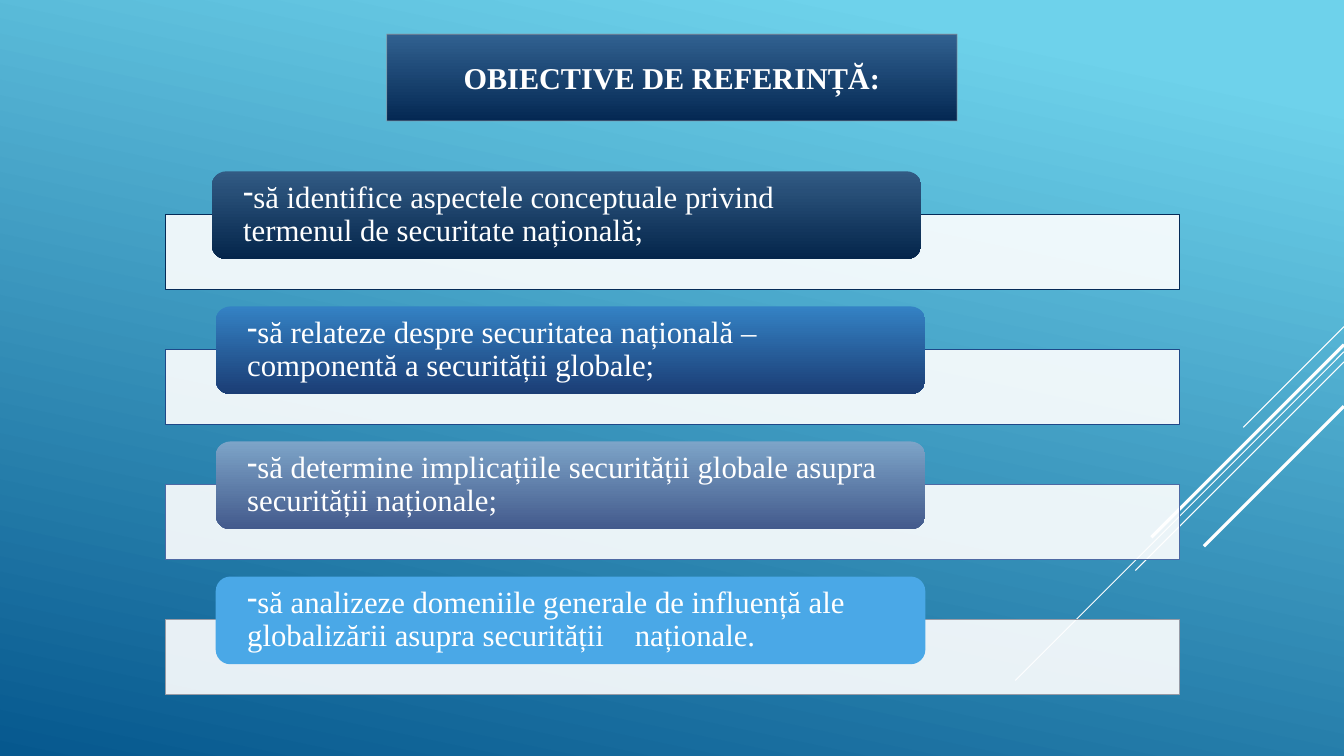
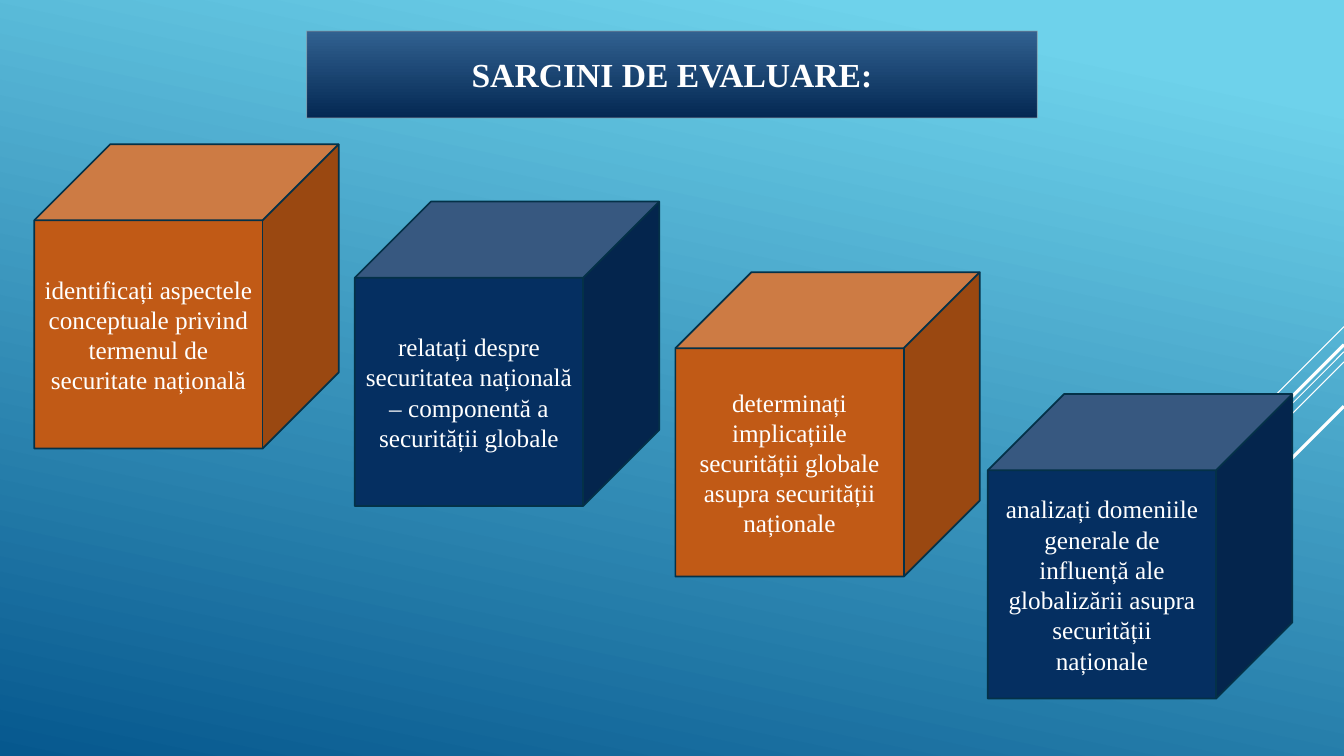
import dataclasses
import typing

import lxml.etree
import pptx
import pptx.dml.color
import pptx.dml.fill
import pptx.enum.shapes
import pptx.enum.text
import pptx.oxml.ns
import pptx.presentation
import pptx.shapes.autoshape
import pptx.slide
import pptx.util

Color = pptx.dml.color.RGBColor
Preset = pptx.enum.shapes.MSO_SHAPE
Align = pptx.enum.text.PP_ALIGN
qn = pptx.oxml.ns.qn

# All lengths are columns and rows of a square grid with cells of 0.1 inch.
CELL = 0.1
COLUMNS, ROWS = 133.33, 75

FONT = "Times New Roman"
WHITE = Color(0xFF, 0xFF, 0xFF)
SKY = Color(0x6E, 0xD2, 0xEB)
OCEAN = Color(0x06, 0x58, 0x8E)
TITLE_TOP = Color(0x31, 0x61, 0x90)
TITLE_BOTTOM = Color(0x04, 0x28, 0x53)
TITLE_EDGE = Color(0x89, 0x91, 0x9C)
ORANGE = Color(0xC1, 0x5A, 0x16)
NAVY = Color(0x05, 0x2F, 0x61)
CUBE_EDGE = Color(0x04, 0x31, 0x48)

BACKGROUND_ANGLE = 102
TITLE_HEIGHT = 8.6
BAR_LEFT, BAR_TOP, BAR_WIDTH, BAR_HEIGHT = 16.4, 21.3, 100.6, 7.4
BAR_PITCH = 13.4
PILL_RISE, PILL_WIDTH, PILL_HEIGHT = 4.3, 70.4, 8.7
PILL_INSET = 2.7
CUBE_SIDE = 30.2


@dataclasses.dataclass(frozen=True)
class Area:
    left: float
    top: float
    width: float
    height: float


@dataclasses.dataclass(frozen=True)
class Ray:
    """A diagonal from the right edge, running down and left by reach."""
    top: float
    reach: float
    weight: float


@dataclasses.dataclass(frozen=True)
class Objective:
    """The phrases of the text are set apart by a wide gap."""
    phrases: tuple[str, ...]
    left: float
    edge: Color
    paint: tuple[Color, ...]


@dataclasses.dataclass(frozen=True)
class Task:
    phrases: tuple[str, ...]
    left: float
    top: float
    color: Color


RAYS = (
    Ray(32.4, 10, 0.75),
    Ray(34.9, 32.6, 0.75),
    Ray(35.9, 20.7, 0.75),
    Ray(34.2, 19.1, 2.25),
    Ray(40.3, 13.9, 2.25),
)

OBJECTIVES = (
    Objective(
        ("să identifice aspectele conceptuale privind termenul de securitate națională;",),
        21, Color(0x05, 0x2B, 0x58),
        (Color(0x32, 0x5B, 0x84), Color(0x04, 0x25, 0x4B))),
    Objective(
        ("să relateze despre securitatea națională – componentă a securității globale;",),
        21.4, Color(0x1F, 0x48, 0x88),
        (Color(0x34, 0x82, 0xC4), Color(0x1B, 0x3D, 0x75))),
    Objective(
        ("să determine implicațiile securității globale asupra securității naționale;",),
        21.4, Color(0x4E, 0x69, 0xA4),
        (Color(0x7D, 0xA4, 0xC8), Color(0x43, 0x5A, 0x8C))),
    Objective(
        ("să analizeze domeniile generale de influență ale globalizării asupra securității",
         "naționale."),
        21.4, Color(0x97, 0x9B, 0xA6), (Color(0x4A, 0xA8, 0xE7),)),
)

TASKS = (
    Task(("identificați aspectele conceptuale privind termenul de securitate națională",),
         3.4, 14.3, ORANGE),
    Task(("relatați despre securitatea națională – componentă a securității globale",),
         35.2, 20, NAVY),
    Task(("determinați implicațiile securității globale asupra securității naționale",),
         67, 27, ORANGE),
    Task(("analizați domeniile generale de influență ale globalizării asupra securității",
          "naționale"),
         98, 39.1, NAVY),
)


def cells(count: float) -> pptx.util.Length:
    return pptx.util.Inches(count * CELL)


def paint_fill(fill: pptx.dml.fill.FillFormat, colors: typing.Sequence[Color],
               angle: float = 90, start: float = 0) -> None:
    """Fill with one plain colour, or with a clockwise-turned gradient of two."""
    if len(colors) == 1:
        fill.solid()
        fill.fore_color.rgb = colors[0]
        return
    fill.gradient()
    fill.gradient_angle = 360 - angle
    for stop, color, position in zip(fill.gradient_stops, colors, (start, 1)):
        stop.color.rgb = color
        stop.position = position


def set_opacity(holder: typing.Any, percent: int) -> None:
    for color in holder.iter(qn("a:srgbClr")):
        lxml.etree.SubElement(color, qn("a:alpha")).set("val", str(percent * 1000))


def add_block(page: pptx.slide.Slide, preset: Preset, area: Area,
              colors: typing.Sequence[Color], edge: Color | None = None,
              weight: float = 0.75) -> pptx.shapes.autoshape.Shape:
    box = page.shapes.add_shape(preset, cells(area.left), cells(area.top),
                                cells(area.width), cells(area.height))
    box.shadow.inherit = False
    paint_fill(box.fill, colors)
    if edge is None:
        box.line.fill.background()
    else:
        box.line.color.rgb = edge
        box.line.width = pptx.util.Pt(weight)
    return box


def write_text(box: pptx.shapes.autoshape.Shape, phrases: typing.Sequence[str], size: float,
               align: Align = Align.CENTER, bold: bool = False) -> typing.Any:
    """Write the phrases as runs, with one widely spaced blank between them."""
    frame = box.text_frame
    frame.word_wrap = True
    frame.vertical_anchor = pptx.enum.text.MSO_ANCHOR.MIDDLE
    para = frame.paragraphs[0]
    para.alignment = align

    def add_span(text: str) -> typing.Any:
        span = para.add_run()
        span.text = text
        span.font.name = FONT
        span.font.size = pptx.util.Pt(size)
        span.font.bold = bold
        span.font.color.rgb = WHITE
        return span

    for index, phrase in enumerate(phrases):
        if index:
            gap = add_span(" ")
            gap._r.get_or_add_rPr().set("spc", str(int(size * 75)))
        add_span(phrase)
    return para


def add_ray(page: pptx.slide.Slide, ray: Ray) -> None:
    line = page.shapes.add_connector(
        pptx.enum.shapes.MSO_CONNECTOR.STRAIGHT, cells(COLUMNS), cells(ray.top),
        cells(COLUMNS - ray.reach), cells(ray.top + ray.reach))
    line.line.color.rgb = WHITE
    line.line.width = pptx.util.Pt(ray.weight)
    lxml.etree.SubElement(line.element.spPr, qn("a:effectLst"))


def add_page(deck: pptx.presentation.Presentation, title: str, title_top: float,
             title_width: float, title_size: float) -> pptx.slide.Slide:
    """Add a blank slide with the shared background, rays and title band."""
    page = deck.slides.add_slide(deck.slide_layouts[6])
    paint_fill(page.background.fill, (SKY, OCEAN), BACKGROUND_ANGLE, 0.1)
    for ray in RAYS:
        add_ray(page, ray)
    area = Area((COLUMNS - title_width) / 2, title_top, title_width, TITLE_HEIGHT)
    band = add_block(page, Preset.RECTANGLE, area, (TITLE_TOP, TITLE_BOTTOM), TITLE_EDGE)
    set_opacity(band.element.spPr.find(qn("a:ln")), 60)
    write_text(band, (title,), title_size, bold=True)
    return page


def add_objective(page: pptx.slide.Slide, objective: Objective, row: int) -> None:
    top = BAR_TOP + row * BAR_PITCH
    bar = add_block(page, Preset.RECTANGLE, Area(BAR_LEFT, top, BAR_WIDTH, BAR_HEIGHT),
                    (WHITE,), objective.edge)
    set_opacity(bar.element.spPr.find(qn("a:solidFill")), 90)

    pill = add_block(page, Preset.ROUNDED_RECTANGLE,
                     Area(objective.left, top - PILL_RISE, PILL_WIDTH, PILL_HEIGHT),
                     objective.paint)
    frame = pill.text_frame
    frame.margin_left = frame.margin_right = cells(PILL_INSET)
    frame.margin_top = frame.margin_bottom = 0
    para = write_text(pill, objective.phrases, 22, Align.LEFT)
    para.line_spacing = 0.9
    properties = para._p.get_or_add_pPr()
    properties.set("marL", "0")
    properties.set("indent", "0")
    lxml.etree.SubElement(properties, qn("a:buChar")).set("char", "-")


def add_task(page: pptx.slide.Slide, task: Task) -> None:
    cube = add_block(page, Preset.CUBE, Area(task.left, task.top, CUBE_SIDE, CUBE_SIDE),
                     (task.color,), CUBE_EDGE, 1.25)
    write_text(cube, task.phrases, 18)


def main() -> None:
    deck = pptx.Presentation()
    deck.slide_width = cells(COLUMNS)
    deck.slide_height = cells(ROWS)

    objectives_page = add_page(deck, "OBIECTIVE DE REFERINȚĂ:", 3.4, 56.6, 21.6)
    for row, objective in enumerate(OBJECTIVES):
        add_objective(objectives_page, objective, row)

    tasks_page = add_page(deck, "SARCINI DE EVALUARE:", 3.1, 72.5, 24)
    for task in TASKS:
        add_task(tasks_page, task)

    deck.save("out.pptx")


if __name__ == "__main__":
    main()
